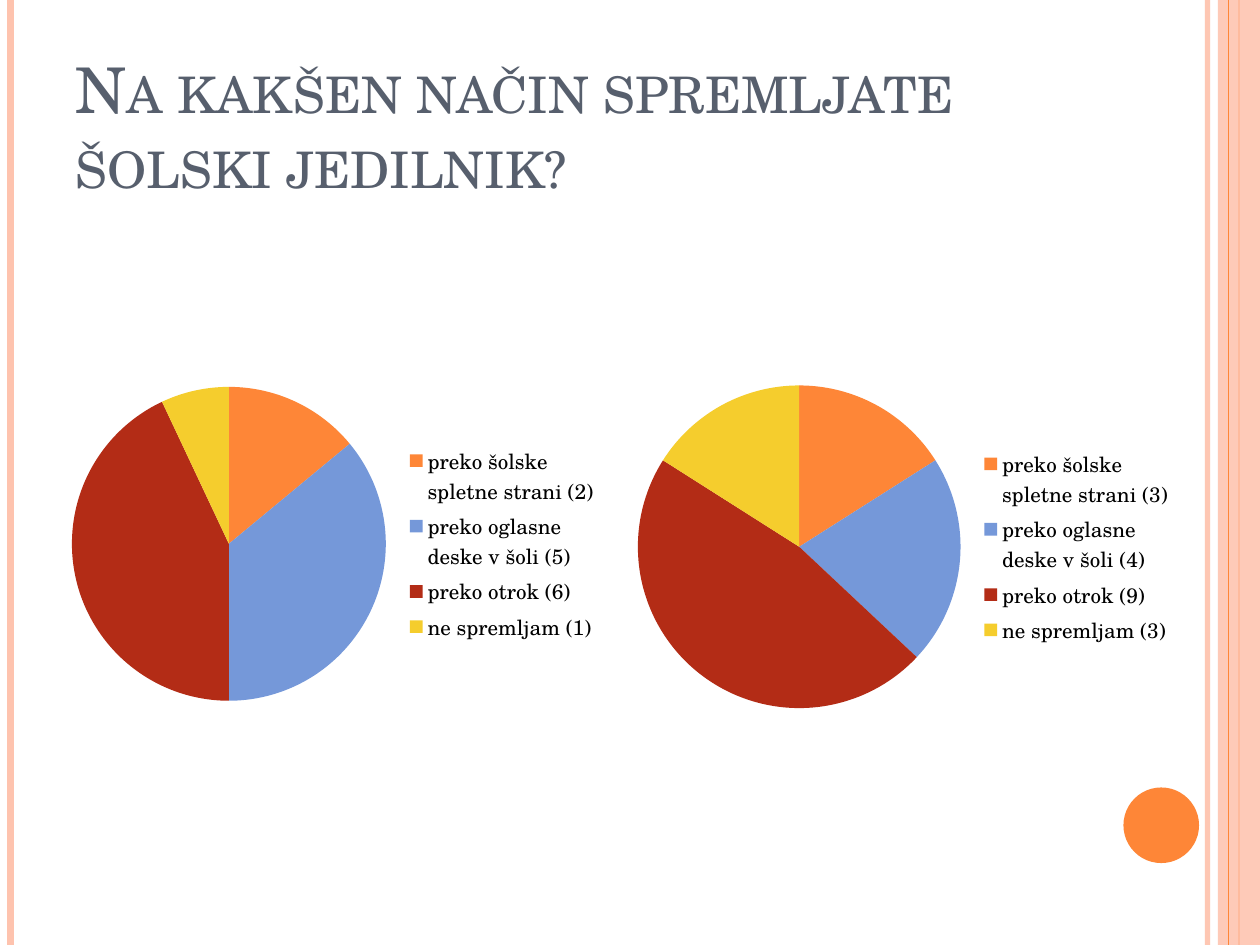
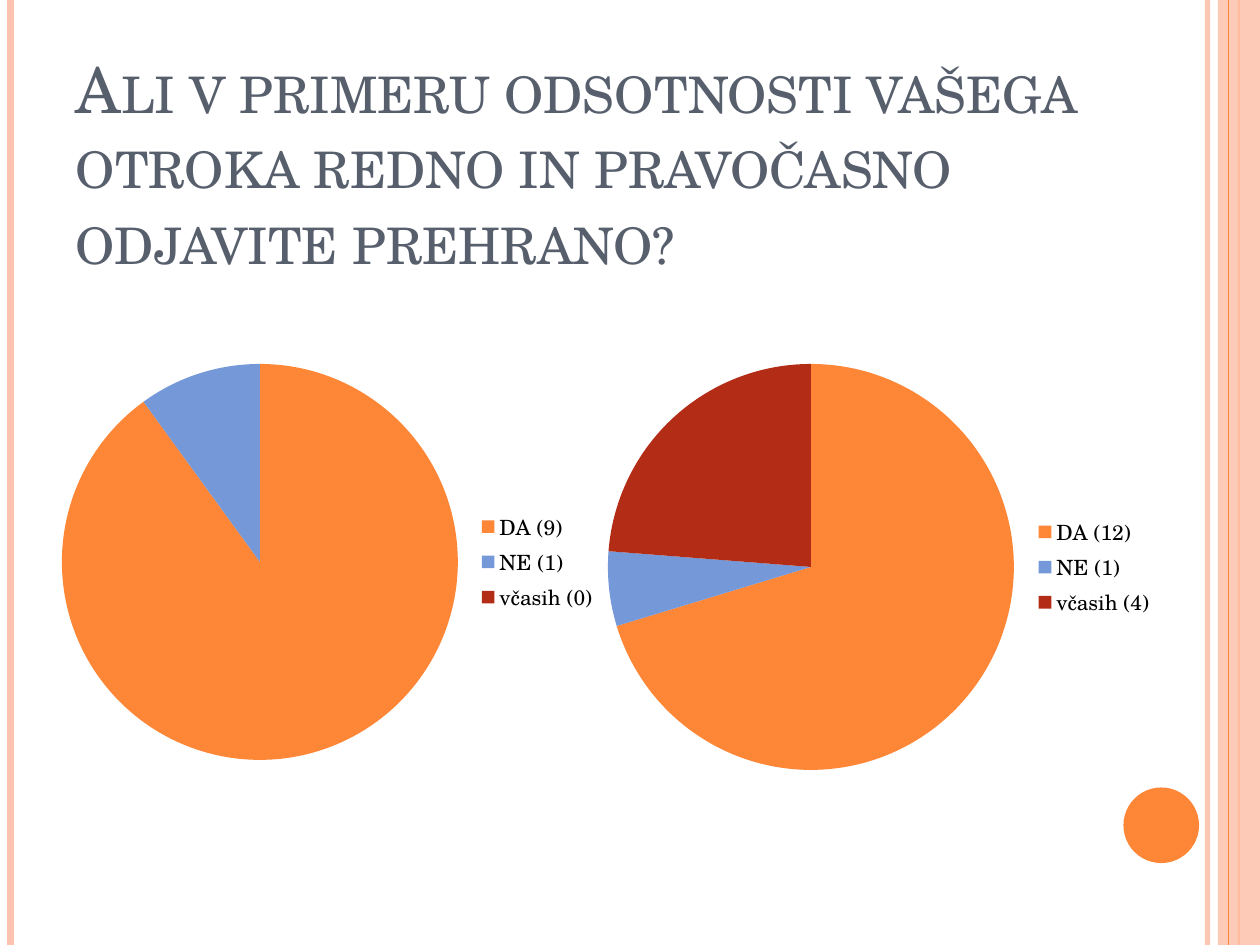
from lxml.etree import SubElement
from pptx import Presentation
from pptx.chart.data import CategoryChartData
from pptx.dml.color import RGBColor
from pptx.enum.chart import XL_CHART_TYPE, XL_LEGEND_POSITION
from pptx.enum.shapes import MSO_CONNECTOR, MSO_SHAPE
from pptx.enum.text import MSO_ANCHOR, MSO_AUTO_SIZE, PP_ALIGN
from pptx.oxml import parse_xml
from pptx.oxml.ns import nsdecls, qn
from pptx.util import Pt

FONT = "TeX Gyre Schola"
PEACH = RGBColor(0xFE, 0xC3, 0xAE)
ORANGE = RGBColor(0xFE, 0x86, 0x37)
BLUE = RGBColor(0x75, 0x98, 0xD9)
RED = RGBColor(0xB3, 0x2C, 0x16)
YELLOW = RGBColor(0xF5, 0xCD, 0x2D)
SLATE = RGBColor(0x57, 0x5F, 0x6D)
BLACK = RGBColor(0, 0, 0)
SLICES = (ORANGE, BLUE, RED, YELLOW)
WIDTH, HEIGHT = 720, 540

SLIDES = [
    {
        "title": "Na kakšen način spremljate šolski jedilnik?",
        "height": 129.6,
        "bottom": 36.2,
        "charts": [
            {
                "box": (31, 179.3, 318.2, 262.8),
                "pie": (41.1, 221.1, 179.4),
                "data": [
                    ("preko šolske spletne strani (2)", 14),
                    ("preko oglasne deske v šoli (5)", 36),
                    ("preko otrok (6)", 43),
                    ("ne spremljam (1)", 7),
                ],
            },
            {
                "box": (354.2, 179.3, 323.3, 266.4),
                "pie": (364.5, 220.3, 184.4),
                "data": [
                    ("preko šolske spletne strani (3)", 16),
                    ("preko oglasne deske v šoli (4)", 21),
                    ("preko otrok (9)", 47),
                    ("ne spremljam (3)", 16),
                ],
            },
        ],
    },
    {
        "title": "Ali v primeru odsotnosti vašega otroka redno in pravočasno odjavite prehrano?",
        "height": 140.4,
        "bottom": 3.6,
        "charts": [
            {
                "box": (25.2, 190.8, 323.3, 260.6),
                "pie": (35.4, 208, 226.3),
                "data": [("DA (9)", 90), ("NE (1)", 10), ("včasih (0)", 0)],
            },
            {
                "box": (337.7, 196.6, 329, 254.9),
                "pie": (347.4, 208, 232),
                "data": [("DA (12)", 71), ("NE (1)", 6), ("včasih (4)", 24)],
            },
        ],
    },
]


def set_alpha(shape, percent):
    color = next(shape.element.spPr.iter(qn("a:srgbClr")))
    SubElement(color, qn("a:alpha")).set("val", str(percent * 1000))


def add_rule(s, x, color, width):
    line = s.shapes.add_connector(MSO_CONNECTOR.STRAIGHT, Pt(x), 0, Pt(x), Pt(HEIGHT))
    line.line.color.rgb = color
    line.line.width = Pt(width)
    SubElement(line.element.spPr, qn("a:effectLst"))
    return line


def add_filled(s, kind, box, color):
    shape = s.shapes.add_shape(kind, *map(Pt, box))
    shape.shadow.inherit = False
    shape.fill.solid()
    shape.fill.fore_color.rgb = color
    shape.line.fill.background()
    return shape


def decorate_layout(layout, s):
    inner_rule = add_rule(s, 690, PEACH, 3)
    set_alpha(inner_rule, 93)
    left_rule = add_rule(s, 6, PEACH, 4.5)
    band_rule = add_rule(s, 708, ORANGE, 1.5)
    band = add_filled(s, MSO_SHAPE.RECTANGLE, (696, 0, 24, HEIGHT), PEACH)
    set_alpha(band, 87)
    edge_rule = add_rule(s, 702, ORANGE, 0.75)
    disc = add_filled(s, MSO_SHAPE.OVAL, (642, 450, 43.2, 43.2), ORANGE)
    parts = (inner_rule, left_rule, band_rule, band, edge_rule, disc)
    for number, part in enumerate(parts, 100):
        next(part.element.iter(qn("p:cNvPr"))).set("id", str(number))
        layout.shapes.element.append(part.element)


def set_title(s, text, *, height, bottom):
    title = s.shapes.title
    title.left, title.top, title.width, title.height = map(Pt, (36, 21.6, 588, height))
    tf = title.text_frame
    tf.text = text
    tf.word_wrap = True
    tf.auto_size = MSO_AUTO_SIZE.NONE
    tf.vertical_anchor = MSO_ANCHOR.BOTTOM
    tf.margin_bottom = Pt(bottom)
    p = tf.paragraphs[0]
    p.alignment = PP_ALIGN.LEFT
    r = p.runs[0]
    r.font.name = FONT
    r.font.size = Pt(36)
    r.font.color.rgb = SLATE
    r.font._element.set("cap", "small")


def place_pie(chart, box, pie):
    left, top, width, height = box
    x, y, diameter = pie
    fractions = {
        "x": (x - left) / width,
        "y": (y - top) / height,
        "w": diameter / width,
        "h": diameter / height,
    }
    modes = '<c:layoutTarget val="inner"/><c:xMode val="edge"/><c:yMode val="edge"/>'
    values = "".join(f'<c:{k} val="{v:.4f}"/>' for k, v in fractions.items())
    layout = parse_xml(
        f'<c:layout {nsdecls("c")}><c:manualLayout>{modes}{values}</c:manualLayout></c:layout>'
    )
    plot_area = next(chart.element.iter(qn("c:plotArea")))
    for old in plot_area.findall(qn("c:layout")):
        plot_area.remove(old)
    plot_area.insert(0, layout)


def add_pie(s, *, box, pie, data):
    labels, values = zip(*data)
    chart_data = CategoryChartData()
    chart_data.categories = labels
    chart_data.add_series("Series 1", values)
    chart = s.shapes.add_chart(XL_CHART_TYPE.PIE, *map(Pt, box), chart_data).chart
    chart.has_title = False
    chart.font.name = FONT
    chart.font.size = Pt(10)
    chart.font.color.rgb = BLACK
    chart.has_legend = True
    chart.legend.position = XL_LEGEND_POSITION.RIGHT
    chart.legend.include_in_layout = False
    chart.legend.font.size = Pt(12)
    chart.legend.font.name = FONT
    chart.legend.font.color.rgb = BLACK
    plot = chart.plots[0]
    plot.vary_by_categories = True
    for i, color in enumerate(SLICES[: len(data)]):
        point = plot.series[0].points[i].format
        point.fill.solid()
        point.fill.fore_color.rgb = color
        point.line.fill.background()
    place_pie(chart, box, pie)


def main():
    prs = Presentation()
    prs.slide_width, prs.slide_height = Pt(WIDTH), Pt(HEIGHT)
    layout = prs.slide_layouts[5]
    for i, content in enumerate(SLIDES):
        s = prs.slides.add_slide(layout)
        if i == 0:
            decorate_layout(layout, s)
        set_title(s, content["title"], height=content["height"], bottom=content["bottom"])
        for chart in content["charts"]:
            add_pie(s, **chart)
    prs.save("out.pptx")


if __name__ == "__main__":
    main()
